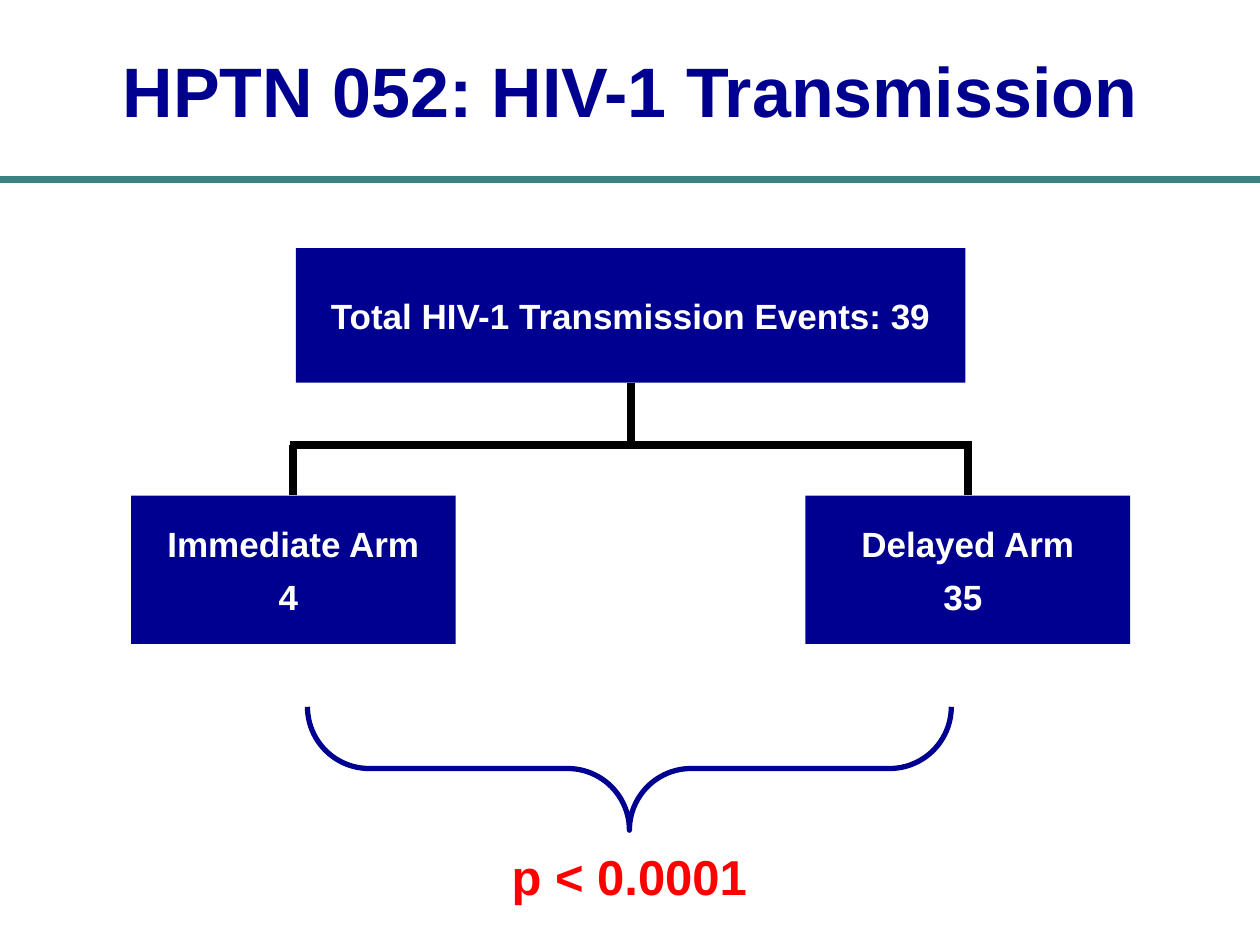
from pptx import Presentation
from pptx.dml.color import RGBColor
from pptx.enum.shapes import MSO_CONNECTOR as Conn, MSO_SHAPE as Shape
from pptx.enum.text import MSO_ANCHOR as Anchor, PP_ALIGN as Align
from pptx.oxml.ns import qn
from pptx.util import Inches, Pt
from lxml.etree import SubElement

NAVY = RGBColor(0x00, 0x00, 0x90)
TEAL = RGBColor(0x3F, 0x80, 0x80)
RED = RGBColor(0xFF, 0x00, 0x00)
BLACK = RGBColor(0x00, 0x00, 0x00)
WHITE = RGBColor(0xFF, 0xFF, 0xFF)
WIDE, HIGH = 10, 7.5


def part(box, x, y, w, h):
    """Return the box at the given shares of another box."""
    left, top, width, height = box
    return left + x * width, top + y * height, w * width, h * height


def put(frame, text, size, color):
    """Fill a text frame with centred bold lines."""
    frame.word_wrap = True
    frame.vertical_anchor = Anchor.MIDDLE
    frame.text = text
    for i, para in enumerate(frame.paragraphs):
        para.alignment = Align.CENTER
        para.space_before = Pt(6 if i else 0)
        for run in para.runs:
            font = run.font
            font.name, font.size, font.bold = "Arial", Pt(size), True
            font.color.rgb = color


def rule(slide, x1, y1, x2, y2, color):
    """Draw a thick straight line without a shadow."""
    line = slide.shapes.add_connector(Conn.STRAIGHT, *map(Inches, (x1, y1, x2, y2)))
    line.line.color.rgb = color
    line.line.width = Pt(4.5)
    SubElement(line._element.spPr, qn("a:effectLst"))


def card(slide, box, text):
    """Draw a navy box with white text."""
    shape = slide.shapes.add_shape(Shape.RECTANGLE, *map(Inches, box))
    shape.shadow.inherit = False
    shape.fill.solid()
    shape.fill.fore_color.rgb = NAVY
    shape.line.fill.background()
    put(shape.text_frame, text, 20, WHITE)


def head(slide, box):
    """Place the title and the rule along its foot."""
    left, top, width, height = box
    title = slide.shapes.title
    title.left, title.top, title.width, title.height = map(Inches, box)
    put(title.text_frame, "HPTN 052: HIV-1 Transmission", 40, NAVY)
    rule(slide, left, top + height, left + width, top + height, TEAL)


def tree(slide, box):
    """Draw the total, its two arms and the lines that join them."""
    left, top, width, height = box
    mid = left + width / 2
    root = part(box, 0.165, 0, 0.67, 0.34)
    arms = [part(box, x, 0.625, 0.325, 0.375) for x in (0, 0.675)]
    ends = [x + w / 2 for x, _, w, _ in arms]
    bar = top + 0.497 * height
    card(slide, root, "Total HIV-1 Transmission Events: 39")
    rule(slide, mid, root[1] + root[3], mid, bar, BLACK)
    rule(slide, ends[0] - 0.03, bar, ends[1] + 0.03, bar, BLACK)
    for end, arm, text in zip(ends, arms, ("Immediate Arm\n4 ", "Delayed Arm\n35 ")):
        rule(slide, end, bar, end, arm[1], BLACK)
        card(slide, arm, text)


def result(slide, box):
    """Draw the brace over the p value."""
    left, top, width, height = box
    deep = 0.62 * height
    brace = slide.shapes.add_shape(
        Shape.RIGHT_BRACE, Inches(left + (width - deep) / 2),
        Inches(top + (deep - width) / 2), Inches(deep), Inches(width))
    brace.rotation = 90
    brace.adjustments[0], brace.adjustments[1] = 0.5, 0.5
    brace.shadow.inherit = False
    brace.fill.background()
    brace.line.color.rgb = NAVY
    brace.line.width = Pt(3)
    note = slide.shapes.add_textbox(*map(Inches, part(box, 0.105, 0.7, 0.79, 0.3)))
    put(note.text_frame, "p < 0.0001", 28, RED)


def main():
    """Build and save the slide."""
    deck = Presentation()
    deck.slide_width, deck.slide_height = Inches(WIDE), Inches(HIGH)
    slide = deck.slides.add_slide(deck.slide_layouts[5])
    page = (0, 0, WIDE, HIGH)
    head(slide, part(page, 0, 0, 1, 0.19))
    tree(slide, (1.04, 1.97, 7.93, 3.14))
    result(slide, (2.44, 5.61, 5.11, 1.58))
    deck.save("out.pptx")


if __name__ == "__main__":
    main()
